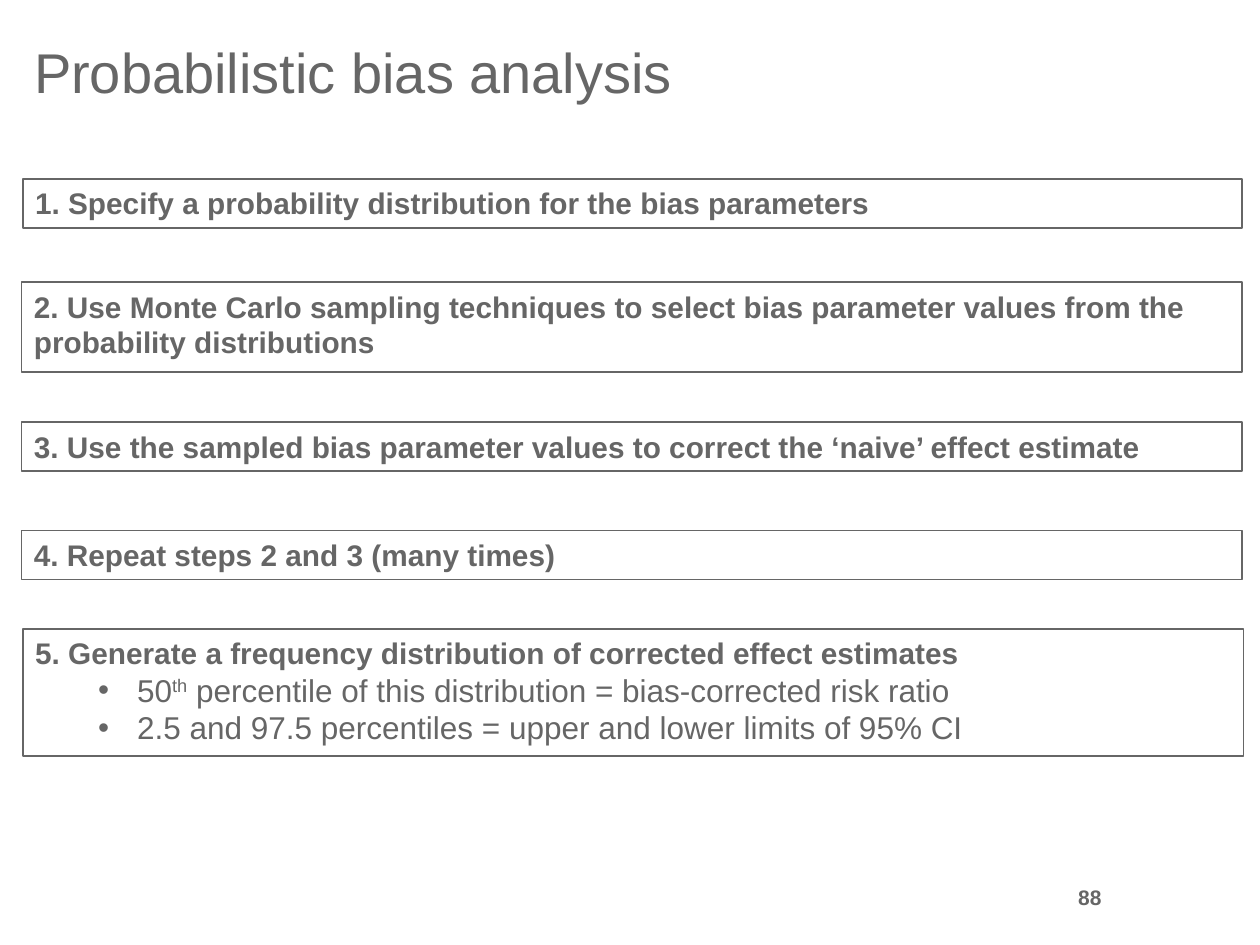
import pptx
from lxml import etree
from pptx.dml.color import RGBColor
from pptx.enum.text import MSO_ANCHOR, PP_ALIGN
from pptx.oxml.ns import qn
from pptx.util import Inches, Pt

COLORS = {"text": "666666", "line": "666666", "box": "FFFFFF"}
STEPS = [
    ((0.18, 1.42, 9.68, 0.39),
     "1. Specify a probability distribution for the bias parameters"),
    ((0.17, 2.24, 9.69, 0.71),
     "2. Use Monte Carlo sampling techniques to select bias parameter "
     "values from the probability distributions"),
    ((0.17, 3.35, 9.69, 0.39),
     "3. Use the sampled bias parameter values to correct the ‘naive’ effect estimate"),
    ((0.17, 4.21, 9.69, 0.39), "4. Repeat steps 2 and 3 (many times)"),
    ((0.18, 4.99, 9.69, 1.01),
     "5. Generate a frequency distribution of corrected effect estimates"),
]
PERCENTILES = [
    ["50", "th", " percentile of this distribution = bias-corrected risk ratio"],
    ["2.5 and 97.5 percentiles = upper and lower limits of 95% CI"],
]


def color(name):
    return RGBColor.from_string(COLORS[name])


def format_run(r, size, bold=False):
    r.font.name = "Arial"
    r.font.size = Pt(size)
    r.font.bold = bold
    r.font.color.rgb = color("text")


def add_title(s, box, text):
    sp = s.shapes.title
    sp.left, sp.top, sp.width, sp.height = map(Inches, box)
    tf = sp.text_frame
    tf.text = text
    tf.word_wrap = True
    tf.vertical_anchor = MSO_ANCHOR.TOP
    p = tf.paragraphs[0]
    p.alignment = PP_ALIGN.LEFT
    format_run(p.runs[0], 32)


def add_step(s, box, text):
    sp = s.shapes.add_textbox(*map(Inches, box))
    sp.fill.solid()
    sp.fill.fore_color.rgb = color("box")
    sp.line.color.rgb = color("line")
    sp.line.width = Pt(1)
    tf = sp.text_frame
    tf.word_wrap = True
    tf.text = text
    format_run(tf.paragraphs[0].runs[0], 17, True)
    return tf


def add_bullet(tf, parts):
    p = tf.add_paragraph()
    p.level = 1
    pPr = p._p.get_or_add_pPr()
    pPr.set("marL", str(Inches(0.81)))
    pPr.set("indent", str(Inches(-0.31)))
    etree.SubElement(pPr, qn("a:buFont"), typeface="Arial")
    etree.SubElement(pPr, qn("a:buChar"), char="•")
    for part in parts:
        r = p.add_run()
        r.text = part
        format_run(r, 18)
        if part == "th":
            r.font._element.set("baseline", "30000")


def add_page_number(s, box, number):
    tf = s.shapes.add_textbox(*map(Inches, box)).text_frame
    tf.word_wrap = True
    tf.vertical_anchor = MSO_ANCHOR.MIDDLE
    tf.text = number
    p = tf.paragraphs[0]
    p.alignment = PP_ALIGN.RIGHT
    format_run(p.runs[0], 12, True)


def main():
    prs = pptx.Presentation()
    prs.slide_width, prs.slide_height = Inches(10), Inches(7.5)
    s = prs.slides.add_slide(prs.slide_layouts.get_by_name("Title Only"))
    add_title(s, (0.17, 0.25, 5.86, 0.64), "Probabilistic bias analysis")
    frames = [add_step(s, box, text) for box, text in STEPS]
    frames[1].paragraphs[0].runs[0].text = STEPS[1][1]
    for parts in PERCENTILES:
        add_bullet(frames[-1], parts)
    add_page_number(s, (8.25, 6.83, 0.59, 0.58), "88")
    prs.save("out.pptx")


if __name__ == "__main__":
    main()
